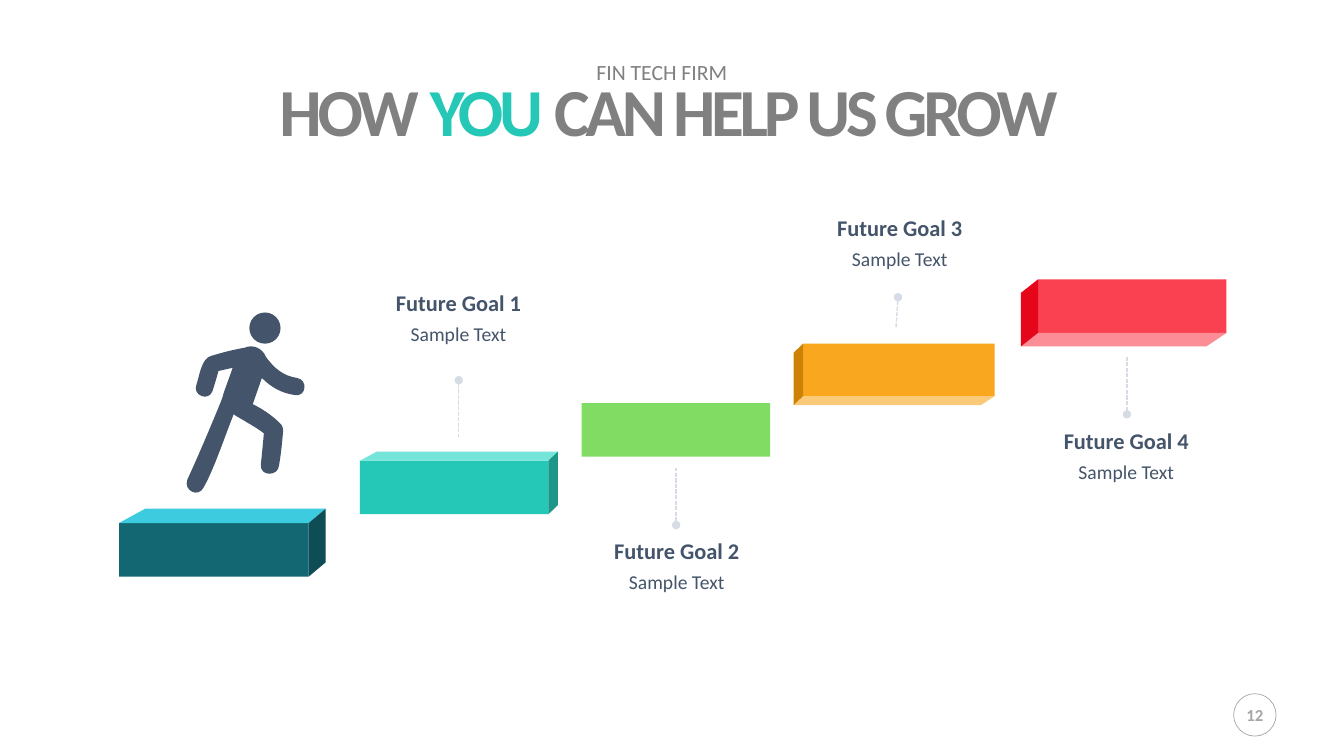
from lxml import etree
from pptx import Presentation
from pptx import util as u
from pptx.dml import color
from pptx.enum import dml, shapes, text
from pptx.oxml import ns

Cm, Pt = u.Cm, u.Pt
FONT = "Calibri"
HUES = {
    "gray": "808080", "pale": "A6A6A6", "navy": "44546A", "mist": "D6DCE5",
    "teal": "25C8B6", "teal_cap": "75E5D9", "teal_side": "1C9689",
    "green": "81DC63",
    "gold": "F9A71F", "gold_cap": "FBCA79", "gold_side": "CD8205",
    "sea": "136772", "sea_cap": "3DCCDF", "sea_side": "0E4D56",
    "red": "FA4151", "red_cap": "FC8D97", "red_side": "E60619",
}

# Steps: hue, front face box, depth (near dx, far dx, dy) or None
STEPS = [
    ("sea", (3, 13.18, 4.78, 1.35), (0.43, 0.66, -0.36)),
    ("teal", (9.07, 11.61, 4.75, 1.35), (0.24, 0.43, -0.23)),
    ("green", (14.66, 10.16, 4.75, 1.35), None),
    ("gold", (20.24, 8.66, 4.83, 1.32), (-0.24, -0.35, 0.23)),
    ("red", (26.16, 7.04, 4.75, 1.35), (-0.43, -0.51, 0.34)),
]

# Goals: label box, then pin from its dot to its loose end
GOALS = [
    ((9.18, 7.16, 4.75, 2.79), (11.56, 9.58, 11.56, 11.02)),
    ((14.68, 13.41, 4.75, 2.79), (17.04, 13.23, 17.04, 11.79)),
    ((20.3, 5.26, 4.75, 2.79), (22.63, 7.49, 22.58, 8.28)),
    ((26.01, 10.64, 4.75, 2.79), (28.4, 10.44, 28.4, 8.97)),
]

# Runner on a grid 195 units high: start point, then cubic curves
GRID = 195
HEAD = (67.5, 10, 31)
START = (22, 184)
CURVES = [
    (32, 167, 44, 131, 52, 111), (54, 113, 75, 124, 82, 130),
    (81, 141, 80, 151, 79, 161), (78, 173, 96, 173, 97, 162),
    (99, 151, 100, 140, 101, 129), (101, 128, 101, 127, 101, 127),
    (101, 124, 100, 122, 98, 120), (90, 112, 81, 106, 71, 101),
    (74, 92, 77, 84, 80, 75), (89, 84, 99, 90, 113, 92),
    (124, 94, 126, 77, 115, 75), (101, 73, 92, 65, 84, 54),
    (81, 46, 71, 41, 63, 45), (51, 47, 40, 50, 30, 53),
    (20, 55, 18, 73, 15, 82), (11, 92, 27, 99, 31, 88),
    (33, 82, 35, 75, 37, 68), (42, 67, 46, 66, 51, 65),
    (48, 74, 41, 92, 41, 94), (39, 100, 19, 148, 6, 176),
    (2, 187, 17, 194, 22, 184),
]


def rgb(hue):
    return color.RGBColor.from_string(HUES[hue])


def paint(shape, hue):
    shape.shadow.inherit = False
    shape.fill.solid()
    shape.fill.fore_color.rgb = rgb(hue)
    shape.line.fill.background()


def block(slide, kind, box, hue):
    shape = slide.shapes.add_shape(kind, *map(Cm, box))
    paint(shape, hue)
    return shape


def outline(slide, points, hue):
    spots = [(Cm(x), Cm(y)) for x, y in points]
    pen = slide.shapes.build_freeform(*spots[0])
    pen.add_line_segments(spots[1:], close=True)
    paint(pen.convert_to_shape(), hue)


def write(slide, box, runs, size, bold=False, wrap=True, lead=1.0,
          inset=(0.25, 0.13), track=0):
    frame = slide.shapes.add_textbox(*map(Cm, box)).text_frame
    frame.word_wrap = wrap
    frame.margin_left = frame.margin_right = Cm(inset[0])
    frame.margin_top = frame.margin_bottom = Cm(inset[1])
    para = frame.paragraphs[0]
    para.alignment = text.PP_ALIGN.CENTER
    para.line_spacing = lead
    for words, hue in runs:
        run = para.add_run()
        run.text = words
        font = run.font
        font.name, font.size, font.bold = FONT, Pt(size), bold
        font.color.rgb = rgb(hue)
        if track:
            run._r.get_or_add_rPr().set("spc", str(track * 100))


def header(slide, box):
    x, y, w, h = box
    write(slide, (x, y + 0.51, w, 2.18),
          [("HOW ", "gray"), ("YOU ", "teal"), ("CAN HELP US GROW ", "gray")],
          48, bold=True, inset=(0.13, 0.05), track=-3)
    write(slide, (x + 3.38, y, 16.18, 1.17), [("FIN TECH FIRM", "gray")],
          15.5, lead=1.2, inset=(0.3, 0.15))


def step(slide, box, hue, depth):
    x, y, w, h = box
    block(slide, shapes.MSO_SHAPE.RECTANGLE, box, hue)
    if not depth:
        return
    near, far, dy = depth
    right = near > 0
    side = x + w if right else x
    edge = y if dy < 0 else y + h
    left_dx, right_dx = (far, near) if right else (near, far)
    outline(slide, [(x, edge), (x + w, edge), (x + w + right_dx, edge + dy),
                    (x + left_dx, edge + dy)], hue + "_cap")
    outline(slide, [(side, y), (side, y + h), (side + near, y + h + dy),
                    (side + near, y + dy)], hue + "_side")


def label(slide, box, num):
    x, y, w, h = box
    write(slide, (x, y + 0.71, w, h - 0.71), [("Sample Text", "navy")],
          14, lead=1.2)
    write(slide, (x + 0.52, y, w - 1.04, 0.94),
          [(f"Future Goal {num}", "navy")], 16, bold=True, wrap=False)


def pin(slide, ends):
    line = slide.shapes.add_connector(shapes.MSO_CONNECTOR.STRAIGHT,
                                      *map(Cm, ends))
    line.line.color.rgb = rgb("mist")
    line.line.width = Pt(1)
    line.line.dash_style = dml.MSO_LINE.SQUARE_DOT
    dot = etree.SubElement(line.line._get_or_add_ln(), ns.qn("a:headEnd"))
    dot.set("type", "oval")
    etree.SubElement(line._element.spPr, ns.qn("a:effectLst"))


def trace(start, curves, count=8):
    points = [start]
    for ax, ay, bx, by, ex, ey in curves:
        sx, sy = points[-1]
        for i in range(1, count + 1):
            t = i / count
            k = 1 - t
            a, b, c, d = k ** 3, 3 * k * k * t, 3 * k * t * t, t ** 3
            points.append((a * sx + b * ax + c * bx + d * ex,
                           a * sy + b * ay + c * by + d * ey))
    return points


def runner(slide, box):
    x, y, w, h = box
    unit = h / GRID
    hx, hy, size = (v * unit for v in HEAD)
    block(slide, shapes.MSO_SHAPE.OVAL, (x + hx, y + hy, size, size), "navy")
    outline(slide, [(x + px * unit, y + py * unit)
                    for px, py in trace(START, CURVES)], "navy")


def badge(slide, box):
    x, y, w, h = box
    write(slide, (x + 0.02, y + 0.15, w - 0.04, 0.76), [("12", "pale")],
          12, bold=True, wrap=False)
    ring = block(slide, shapes.MSO_SHAPE.OVAL, box, "pale")
    ring.fill.background()
    ring.line.color.rgb = rgb("pale")
    ring.line.width = Pt(0.5)


def main():
    deck = Presentation()
    deck.slide_width, deck.slide_height = Cm(33.87), Cm(19.05)
    slide = deck.slides.add_slide(deck.slide_layouts[6])

    badge(slide, (31.09, 17.48, 1.07, 1.07))
    header(slide, (5.21, 1.19, 23.55, 2.69))
    for hue, box, depth in STEPS:
        step(slide, box, hue, depth)
    for num, (box, ends) in enumerate(GOALS, 1):
        label(slide, box, num)
        pin(slide, ends)
    runner(slide, (4.57, 7.62, 3.1, 4.95))

    deck.save("out.pptx")


if __name__ == "__main__":
    main()
